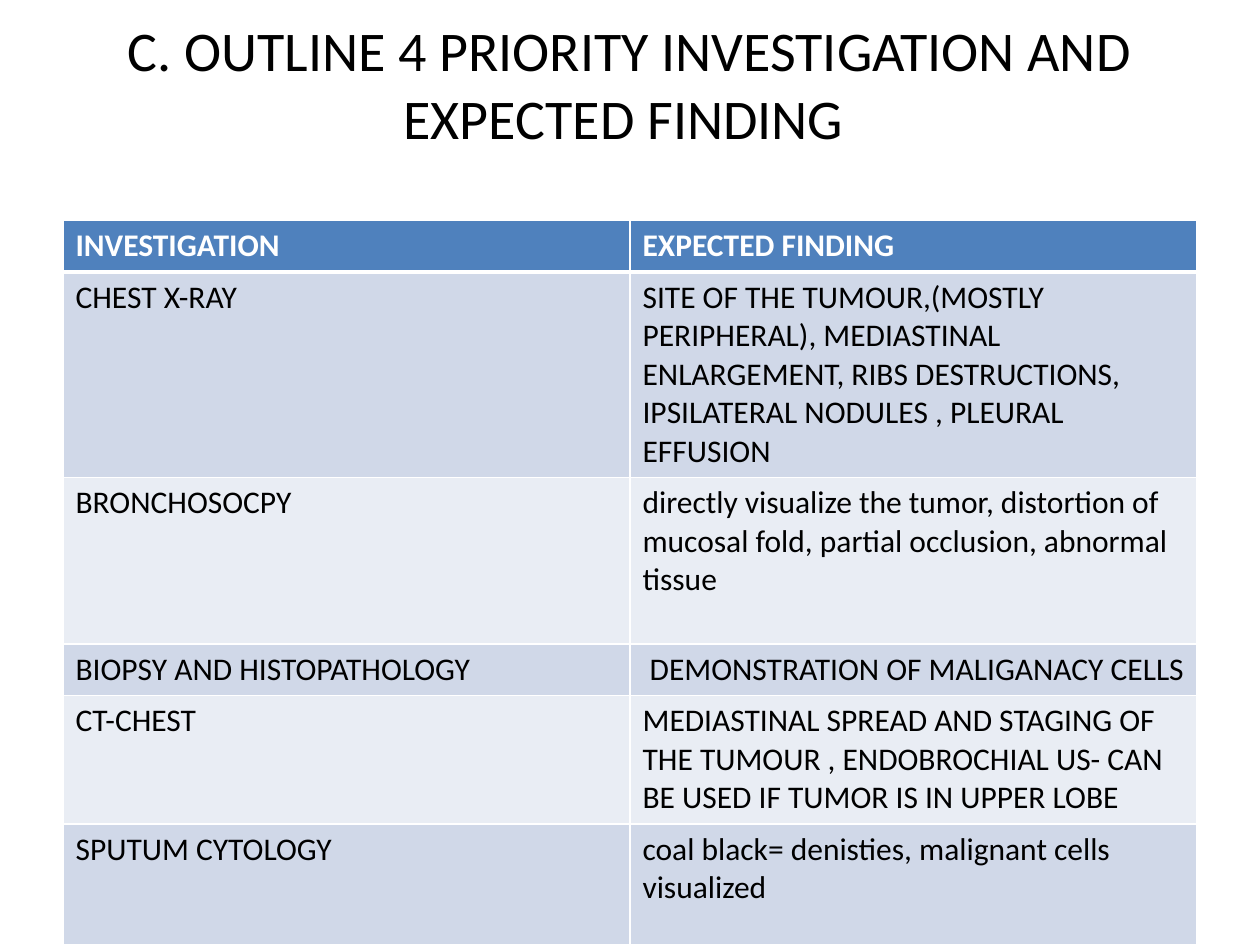
from lxml import etree
from pptx import Presentation
from pptx.dml.color import RGBColor
from pptx.enum.text import MSO_ANCHOR, PP_ALIGN
from pptx.oxml.ns import qn
from pptx.util import Inches, Pt

CENTER, LEFT = PP_ALIGN.CENTER, PP_ALIGN.LEFT
MIDDLE = MSO_ANCHOR.MIDDLE

FONT = "Calibri"
WIDTH, HEIGHT = 10, 7.5
MARGIN = 0.05 * WIDTH
CONTENT_WIDTH = WIDTH - 2 * MARGIN
TITLE = "C. OUTLINE 4 PRIORITY INVESTIGATION AND EXPECTED FINDING "
HEADER_FILL = "4F81BD"
BAND_FILLS = ("E9EDF4", "D0D8E8")
ROWS = [
    (0.41, "INVESTIGATION", "EXPECTED FINDING"),
    (1.63, "CHEST X-RAY",
     "SITE OF THE TUMOUR,(MOSTLY PERIPHERAL), MEDIASTINAL ENLARGEMENT, "
     "RIBS DESTRUCTIONS, IPSILATERAL NODULES , PLEURAL EFFUSION"),
    (1.32, "BRONCHOSOCPY",
     "directly visualize the tumor, distortion of mucosal fold, "
     "partial occlusion, abnormal tissue"),
    (0.41, "BIOPSY AND HISTOPATHOLOGY", " DEMONSTRATION OF MALIGANACY CELLS"),
    (1.02, "CT-CHEST",
     "MEDIASTINAL SPREAD AND STAGING OF THE TUMOUR , ENDOBROCHIAL US- "
     "CAN BE USED IF TUMOR IS IN UPPER LOBE"),
    (0.96, "SPUTUM CYTOLOGY",
     "coal black= denisties, malignant cells visualized"),
]


def rgb(value):
    return RGBColor.from_string(value)


def add_text(tf, text, size, color, align, bold=False):
    p = tf.paragraphs[0]
    p.alignment = align
    r = p.add_run()
    r.text = text
    r.font.name = FONT
    r.font.size = Pt(size)
    r.font.bold = bold
    r.font.color.rgb = rgb(color)


def set_borders(cell, color, **widths):
    tc_pr = cell._tc.get_or_add_tcPr()
    for side in "LRTB":
        ln = etree.SubElement(tc_pr, qn(f"a:ln{side}"), w=str(Pt(widths.get(side, 1))))
        fill = etree.SubElement(ln, qn("a:solidFill"))
        etree.SubElement(fill, qn("a:srgbClr"), val=color)


def add_title(s):
    sp = s.shapes.title
    sp.left, sp.top = Inches(MARGIN), Inches(0.04 * HEIGHT)
    sp.width, sp.height = Inches(CONTENT_WIDTH), Inches(1.25)
    tf = sp.text_frame
    tf.word_wrap = True
    tf.vertical_anchor = MIDDLE
    tf.margin_bottom = Inches(0.58)
    add_text(tf, TITLE, 32, "000000", CENTER)


def add_findings_table(s):
    total = sum(height for height, *_ in ROWS)
    table = s.shapes.add_table(
        len(ROWS), 2, Inches(MARGIN), Inches(1.75),
        Inches(CONTENT_WIDTH), Inches(total)).table
    for i, (height, *texts) in enumerate(ROWS):
        header = i == 0
        table.rows[i].height = Inches(height)
        for j, text in enumerate(texts):
            cell = table.cell(i, j)
            set_borders(cell, "FFFFFF", T=3 if i == 1 else 1, B=3 if header else 1)
            cell.fill.solid()
            cell.fill.fore_color.rgb = rgb(HEADER_FILL if header else BAND_FILLS[i % 2])
            add_text(cell.text_frame, text, 18,
                     "FFFFFF" if header else "000000", LEFT, header)


def main():
    prs = Presentation()
    prs.slide_width, prs.slide_height = Inches(WIDTH), Inches(HEIGHT)
    s = prs.slides.add_slide(prs.slide_layouts[5])
    add_title(s)
    add_findings_table(s)
    prs.save("out.pptx")


if __name__ == "__main__":
    main()
